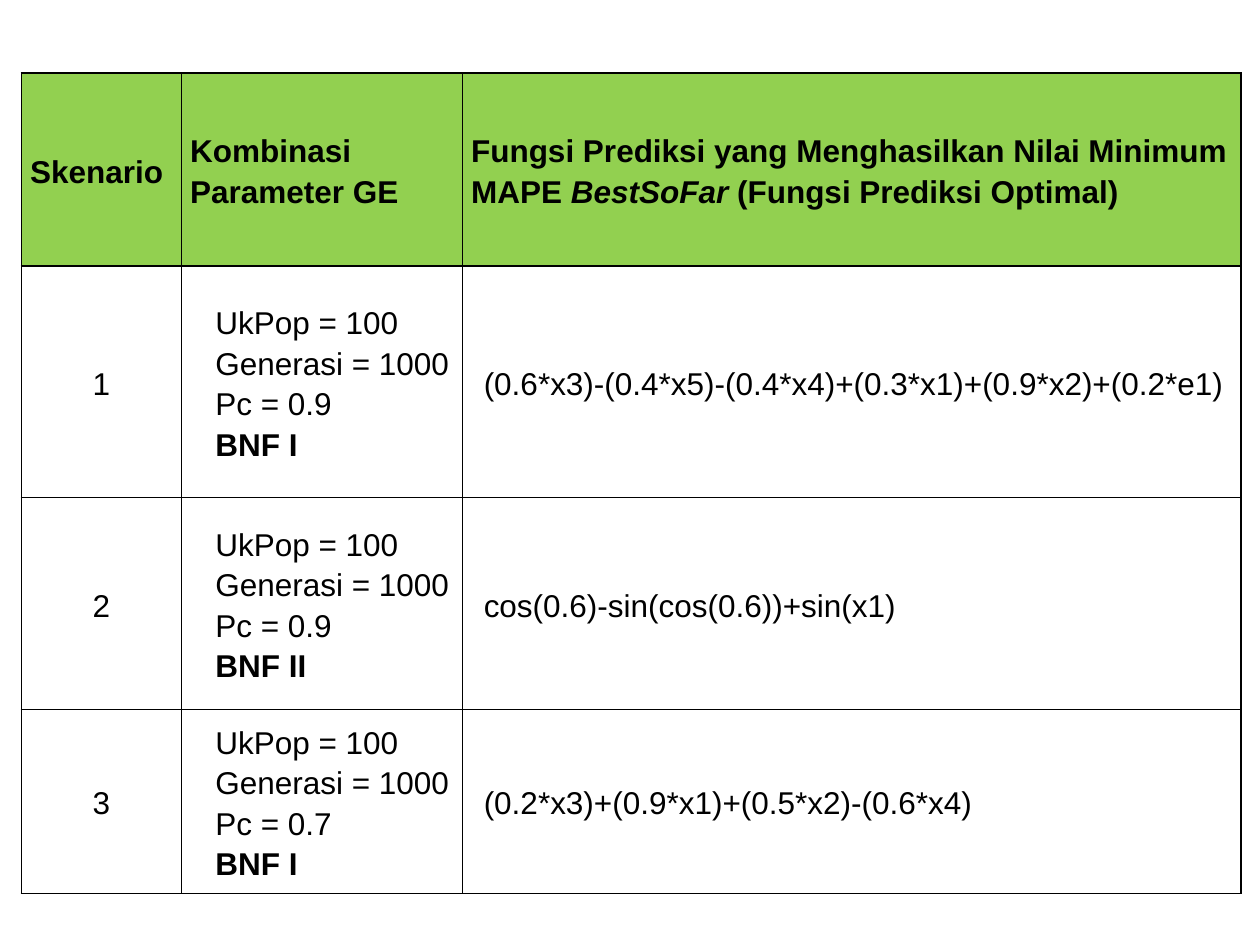
import pptx
import pptx.util
import pptx.dml.color
import pptx.enum.text
import pptx.oxml
import pptx.oxml.ns
from dataclasses import dataclass

Inches, Pt = pptx.util.Inches, pptx.util.Pt
RGB = pptx.dml.color.RGBColor
ALIGN = pptx.enum.text.PP_ALIGN


@dataclass(frozen=True)
class Theme:
    font: str = "Arial"
    size: int = 18
    spacing: float = 1.15
    ink: str = "000000"
    header_fill: str = "92D050"
    border_pt: int = 1


THEME = Theme()

# A cell is a list of paragraphs, a paragraph a list of (text, style) runs;
# in a style, "b" is bold and "i" italic.
HEADER = [
    [[("Skenario", "b")]],
    [[("Kombinasi Parameter GE", "b")]],
    [[("Fungsi Prediksi yang Menghasilkan Nilai Minimum MAPE ", "b"),
      ("BestSoFar ", "bi"),
      ("(Fungsi Prediksi Optimal)", "b")]],
]
# population size, generations, crossover probability, grammar, best function
SCENARIOS = [
    (100, 1000, 0.9, "BNF I",
     "(0.6*x3)-(0.4*x5)-(0.4*x4)+(0.3*x1)+(0.9*x2)+(0.2*e1)"),
    (100, 1000, 0.9, "BNF II", "cos(0.6)-sin(cos(0.6))+sin(x1)"),
    (100, 1000, 0.7, "BNF I", "(0.2*x3)+(0.9*x1)+(0.5*x2)-(0.6*x4)"),
]
LEFT, TOP = 0.17, 0.58
COL_WIDTHS = [1.27, 2.23, 6.18]
ROW_HEIGHTS = [1.53, 1.84, 1.68, 1.46]
BODY_ALIGN = [ALIGN.CENTER, ALIGN.LEFT, ALIGN.LEFT]
BODY_INDENT = [0, 0.2, 0.1]
CELL_MARGIN = 0.07


def scenario_cells(number, scenario):
    population, generations, pc, grammar, function = scenario
    return [
        [[(str(number), "")]],
        [[(f"UkPop = {population}", "")],
         [(f"Generasi = {generations}", "")],
         [(f"Pc = {pc}", "")],
         [(grammar, "b")]],
        [[(function, "")]],
    ]


def add_borders(cell):
    """Outline all four sides; call before filling, as lines precede the fill in XML."""
    tc_pr = cell._tc.get_or_add_tcPr()
    for side in ("L", "R", "T", "B"):
        tc_pr.append(pptx.oxml.parse_xml(
            f'<a:ln{side} {pptx.oxml.ns.nsdecls("a")} w="{Pt(THEME.border_pt)}">'
            f'<a:solidFill><a:srgbClr val="{THEME.ink}"/></a:solidFill>'
            f'</a:ln{side}>'))


def fill_cell(cell, paragraphs, align=ALIGN.LEFT, indent=0, fill=None):
    add_borders(cell)
    if fill:
        cell.fill.solid()
        cell.fill.fore_color.rgb = RGB.from_string(fill)
    else:
        cell.fill.background()
    cell.vertical_anchor = pptx.enum.text.MSO_ANCHOR.MIDDLE
    cell.margin_left = cell.margin_right = Inches(CELL_MARGIN)
    cell.margin_top = cell.margin_bottom = 0
    tf = cell.text_frame
    for n, runs in enumerate(paragraphs):
        p = tf.add_paragraph() if n else tf.paragraphs[0]
        p.alignment = align
        p.line_spacing = THEME.spacing
        if indent:
            p_pr = p._p.get_or_add_pPr()
            p_pr.set("marL", str(Inches(indent)))
            p_pr.set("indent", "0")
        for text, style in runs:
            r = p.add_run()
            r.text = text
            r.font.name = THEME.font
            r.font.size = Pt(THEME.size)
            r.font.bold = "b" in style
            r.font.italic = "i" in style
            r.font.color.rgb = RGB.from_string(THEME.ink)


def main():
    prs = pptx.Presentation()
    prs.slide_width, prs.slide_height = Inches(10), Inches(7.5)
    s = prs.slides.add_slide(prs.slide_layouts[6])

    table = s.shapes.add_table(
        len(ROW_HEIGHTS), len(COL_WIDTHS), Inches(LEFT), Inches(TOP),
        Inches(sum(COL_WIDTHS)), Inches(sum(ROW_HEIGHTS))).table
    table.first_row = table.horz_banding = False
    for column, width in zip(table.columns, COL_WIDTHS):
        column.width = Inches(width)
    for row, height in zip(table.rows, ROW_HEIGHTS):
        row.height = Inches(height)

    for col, paragraphs in enumerate(HEADER):
        fill_cell(table.cell(0, col), paragraphs, fill=THEME.header_fill)
    for number, scenario in enumerate(SCENARIOS, start=1):
        for col, paragraphs in enumerate(scenario_cells(number, scenario)):
            fill_cell(table.cell(number, col), paragraphs,
                      BODY_ALIGN[col], BODY_INDENT[col])

    prs.save("out.pptx")


if __name__ == "__main__":
    main()
